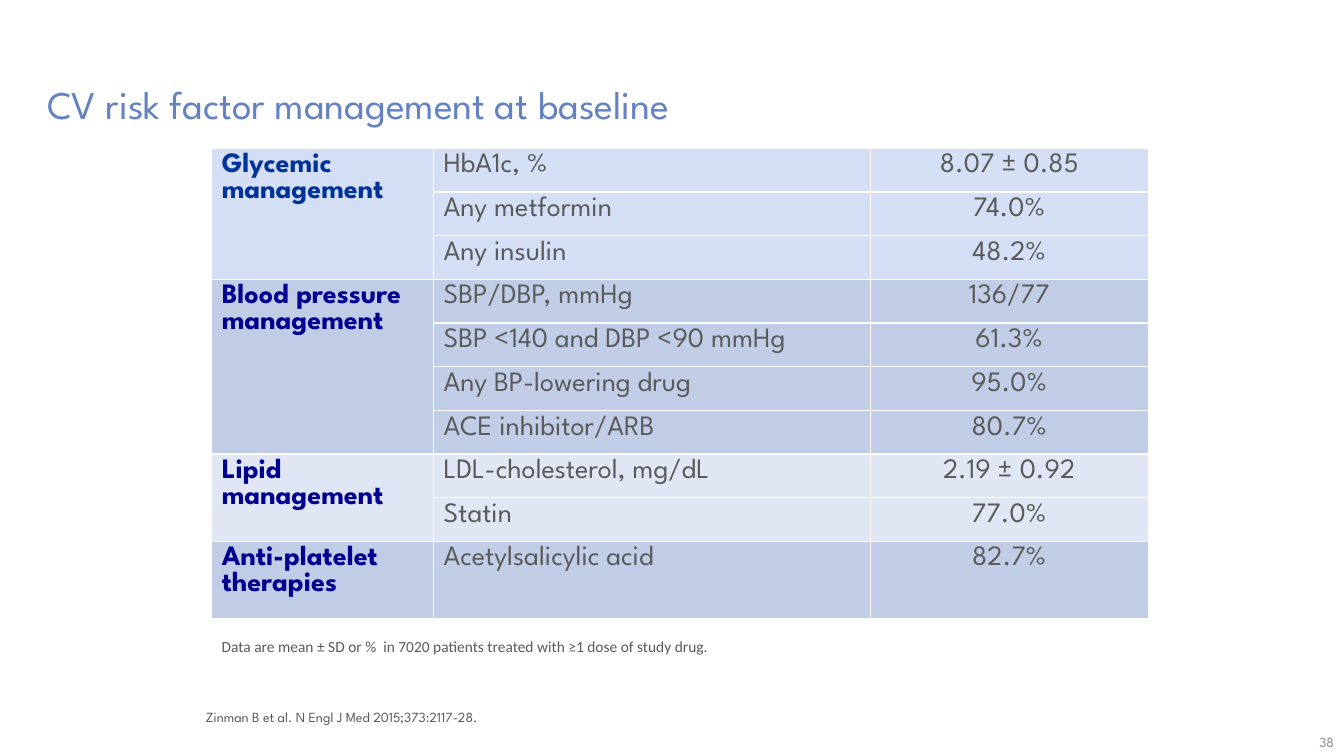
import pptx
import pptx.util
import pptx.dml.color
import pptx.enum.text
import pptx.oxml
from dataclasses import dataclass

Inches = pptx.util.Inches
Align = pptx.enum.text.PP_ALIGN
Anchor = pptx.enum.text.MSO_ANCHOR


@dataclass(frozen=True)
class Theme:
    font: str = "League Spartan"
    note_font: str = "Calibri"
    title: str = "6482C3"
    body: str = "5A5A5A"
    number: str = "8C8C8C"
    border: str = "FFFFFF"
    navy: str = "000090"
    blue: str = "003399"
    sky: str = "D4DEF4"
    steel: str = "C1CDE7"
    mist: str = "E0E6F3"
    title_size: int = 28
    table_size: int = 20
    note_size: int = 11
    small_size: int = 10


theme = Theme()

TITLE = "CV risk factor management at baseline"
NOTE = "Data are mean ± SD or %  in 7020 patients treated with ≥1 dose of study drug."
REFERENCE = "Zinman B et al. N Engl J Med 2015;373:2117-28."
PAGE_NUMBER = "38"

GROUPS = [
    ("Glycemic management", theme.blue, theme.sky, [
        ("HbA1c, %", "8.07 ± 0.85"),
        ("Any metformin", "74.0%"),
        ("Any insulin", "48.2%"),
    ]),
    ("Blood pressure management", theme.navy, theme.steel, [
        ("SBP/DBP, mmHg", "136/77"),
        ("SBP <140 and DBP <90 mmHg", "61.3%"),
        ("Any BP-lowering drug", "95.0%"),
        ("ACE inhibitor/ARB", "80.7%"),
    ]),
    ("Lipid management", theme.navy, theme.mist, [
        ("LDL-cholesterol, mg/dL", "2.19 ± 0.92"),
        ("Statin", "77.0%"),
    ]),
    ("Anti-platelet therapies", theme.navy, theme.steel, [
        ("Acetylsalicylic acid", "82.7%"),
    ]),
]

PAGE_WIDTH, PAGE_HEIGHT = 13.33, 7.5
TABLE_LEFT, TABLE_TOP = 2.1, 1.47
COLUMNS = (2.2, 4.33, 2.76)
TABLE_WIDTH = sum(COLUMNS)
ROW_HEIGHT = 1.3 / 3
SINGLE_ROW_HEIGHT = 0.77


def color(value):
    return pptx.dml.color.RGBColor.from_string(value)


def write(frame, text, size, ink, font=theme.font, bold=False, align=Align.LEFT):
    para = frame.paragraphs[0]
    para.alignment = align
    span = para.add_run()
    span.text = text
    span.font.name = font
    span.font.size = pptx.util.Pt(size)
    span.font.bold = bold
    span.font.color.rgb = color(ink)


def add_text(page, area, anchor, text, size, ink, **style):
    box = page.shapes.add_textbox(*map(Inches, area))
    frame = box.text_frame
    frame.word_wrap = True
    frame.vertical_anchor = anchor
    write(frame, text, size, ink, **style)


def paint(cell, fill):
    cell.fill.solid()
    cell.fill.fore_color.rgb = color(fill)
    properties = cell._tc.get_or_add_tcPr()
    for index, side in enumerate(("lnL", "lnR", "lnT", "lnB")):
        properties.insert(index, pptx.oxml.parse_xml(
            f'<a:{side} xmlns:a="http://schemas.openxmlformats.org/drawingml/2006/main" w="12700">'
            f'<a:solidFill><a:srgbClr val="{theme.border}"/></a:solidFill></a:{side}>'))


def add_group(page, top, heading, ink, fill, rows):
    row_height = ROW_HEIGHT if len(rows) > 1 else SINGLE_ROW_HEIGHT
    height = row_height * len(rows)
    table = page.shapes.add_table(
        len(rows), len(COLUMNS), Inches(TABLE_LEFT), Inches(top),
        Inches(TABLE_WIDTH), Inches(height)).table
    table.first_row = False
    table.horz_banding = False
    for column, width in zip(table.columns, COLUMNS):
        column.width = Inches(width)
    for row in table.rows:
        row.height = Inches(row_height)
        for cell in row.cells:
            paint(cell, fill)
    if len(rows) > 1:
        table.cell(0, 0).merge(table.cell(len(rows) - 1, 0))
    write(table.cell(0, 0).text_frame, heading, theme.table_size, ink, bold=True)
    for index, (measure, value) in enumerate(rows):
        write(table.cell(index, 1).text_frame, measure, theme.table_size, theme.body)
        write(table.cell(index, 2).text_frame, value, theme.table_size, theme.body,
              align=Align.CENTER)
    return top + height


def main():
    deck = pptx.Presentation()
    deck.slide_width = Inches(PAGE_WIDTH)
    deck.slide_height = Inches(PAGE_HEIGHT)
    page = deck.slides.add_slide(deck.slide_layouts[6])

    add_text(page, (0.37, 0.21, 12.6, 1.1), Anchor.BOTTOM,
             TITLE, theme.title_size, theme.title)
    top = TABLE_TOP
    for group in GROUPS:
        top = add_group(page, top, *group)
    add_text(page, (TABLE_LEFT, 6.27, TABLE_WIDTH, 0.29), Anchor.TOP,
             NOTE, theme.note_size, theme.body, font=theme.note_font)
    add_text(page, (1.94, 6.98, 7.48, 0.27), Anchor.BOTTOM,
             REFERENCE, theme.small_size, theme.body)
    add_text(page, (PAGE_WIDTH - 1.36, PAGE_HEIGHT - 0.28, 1.36, 0.28), Anchor.MIDDLE,
             PAGE_NUMBER, theme.small_size, theme.number, align=Align.RIGHT)
    deck.save("out.pptx")


if __name__ == "__main__":
    main()
